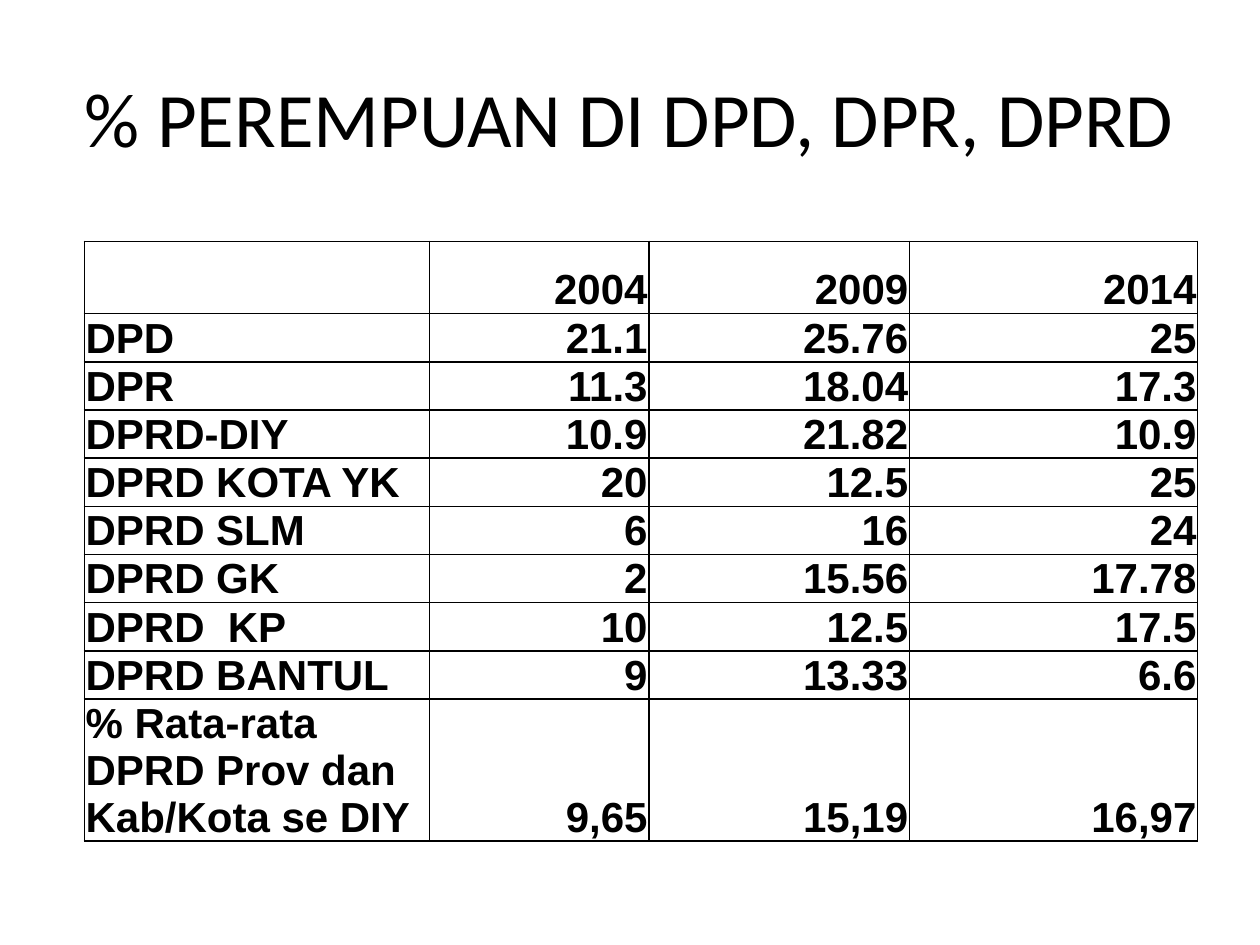
import pptx
import pptx.util
import pptx.dml.color
import pptx.enum.text
import lxml.etree

Pt = pptx.util.Pt
Align = pptx.enum.text.PP_ALIGN
Anchor = pptx.enum.text.MSO_ANCHOR

# Content
TITLE = "% PEREMPUAN DI DPD, DPR, DPRD"
ROWS = [
    ("", "2004", "2009", "2014"),
    ("DPD", "21.1", "25.76", "25"),
    ("DPR", "11.3", "18.04", "17.3"),
    ("DPRD-DIY", "10.9", "21.82", "10.9"),
    ("DPRD KOTA YK", "20", "12.5", "25"),
    ("DPRD SLM", "6", "16", "24"),
    ("DPRD GK", "2", "15.56", "17.78"),
    ("DPRD  KP", "10", "12.5", "17.5"),
    ("DPRD BANTUL", "9", "13.33", "6.6"),
    ("% Rata-rata DPRD Prov dan Kab/Kota se DIY", "9,65", "15,19", "16,97"),
]
WIDTHS = [197.2, 125.4, 149, 164.7]
HEAD, BODY, FOOT = 41.3, 27, 75
INK, PAPER = "000000", "FFFFFF"


def color(text):
    return pptx.dml.color.RGBColor.from_string(text)


def write(frame, text, font, size, bold, align):
    par = frame.paragraphs[0]
    par.alignment = align
    par.font.size = Pt(size)
    if text:
        run = par.add_run()
        run.text = text
        run.font.name, run.font.size, run.font.bold = font, Pt(size), bold
        run.font.color.rgb = color(INK)


def border(cell, width=1):
    props = cell._tc.get_or_add_tcPr()
    space = "{" + props.nsmap["a"] + "}"
    for spot, side in enumerate(("lnL", "lnR", "lnT", "lnB")):
        line = lxml.etree.Element(space + side, w=str(Pt(width)))
        fill = lxml.etree.SubElement(line, space + "solidFill")
        lxml.etree.SubElement(fill, space + "srgbClr", val=INK)
        props.insert(spot, line)  # borders come before the fill


def style(cell):
    cell.vertical_anchor = Anchor.BOTTOM
    cell.margin_left = cell.margin_right = cell.margin_top = Pt(0.75)
    cell.margin_bottom = Pt(0)
    cell.fill.solid()
    cell.fill.fore_color.rgb = color(PAPER)
    border(cell)


def main():
    deck = pptx.Presentation()
    deck.slide_width, deck.slide_height = Pt(720), Pt(540)
    slide = deck.slides.add_slide(deck.slide_layouts[5])

    # Title
    title = slide.shapes.title
    title.left, title.top = Pt(36), Pt(21.6)
    title.width, title.height = Pt(648), Pt(90)
    title.text_frame.vertical_anchor = Anchor.MIDDLE
    write(title.text_frame, TITLE, "Calibri", 44, False, Align.CENTER)

    # Table
    tall = [HEAD] + [BODY] * (len(ROWS) - 2) + [FOOT]
    frame = slide.shapes.add_table(len(ROWS), len(WIDTHS), Pt(48.2), Pt(138),
                                   Pt(sum(WIDTHS)), Pt(sum(tall)))
    table = frame.table
    table.horz_banding = False
    for col, width in zip(table.columns, WIDTHS):
        col.width = Pt(width)
    for row, height, texts in zip(table.rows, tall, ROWS):
        row.height = Pt(height)
        for spot, (cell, text) in enumerate(zip(row.cells, texts)):
            style(cell)
            align = Align.RIGHT if spot else Align.LEFT
            write(cell.text_frame, text, "Arial", 24, True, align)
    frame.height = Pt(365)

    deck.save("out.pptx")


if __name__ == "__main__":
    main()
